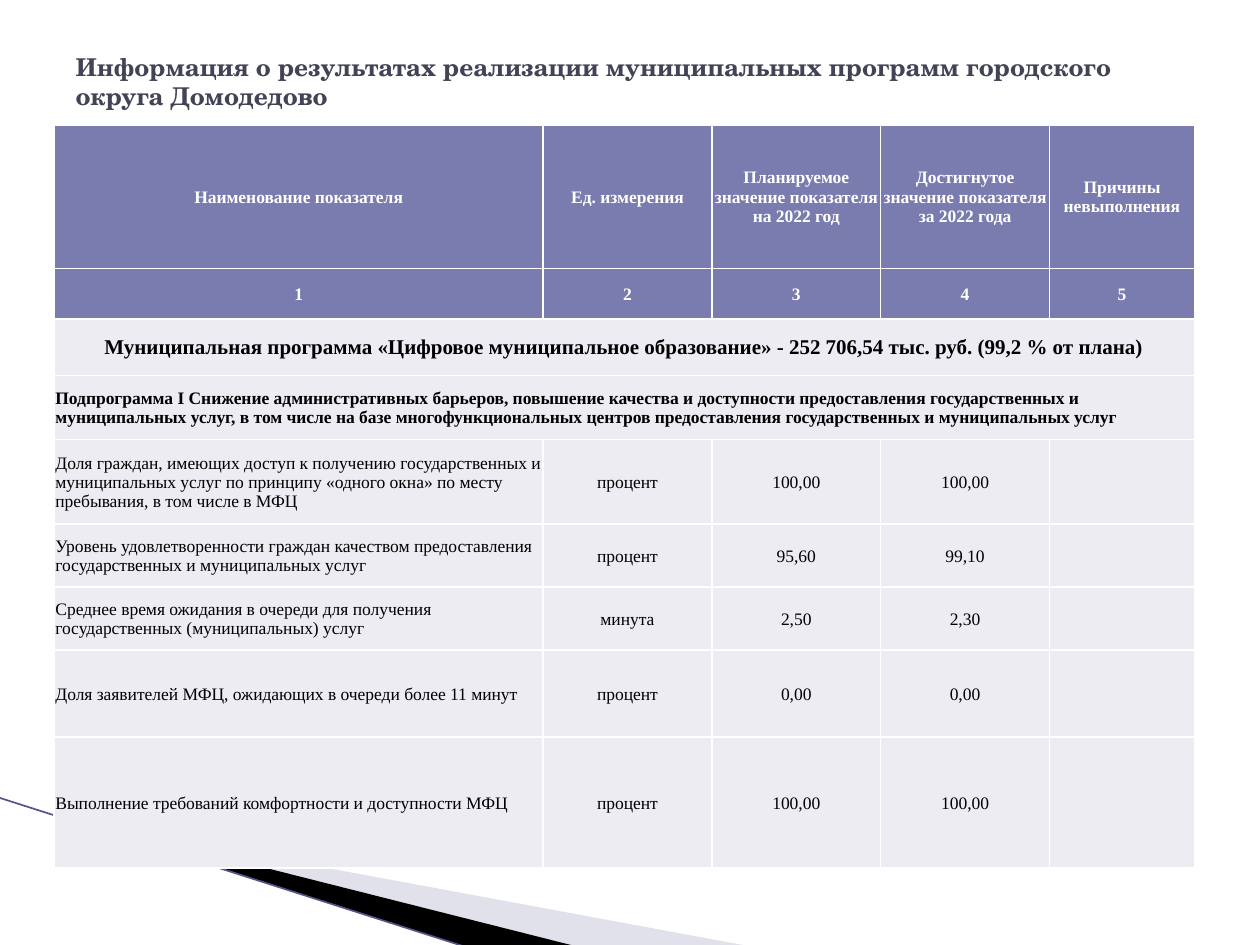
from dataclasses import dataclass

import pptx
import pptx.dml.color
import pptx.enum.shapes
import pptx.enum.text
import pptx.oxml
import pptx.oxml.ns
import pptx.util
from pptx.util import Inches

ALIGN = pptx.enum.text.PP_ALIGN
MIDDLE = pptx.enum.text.MSO_ANCHOR.MIDDLE


@dataclass(frozen=True)
class Theme:
    title_font: str = "TeX Gyre Schola"
    table_font: str = "Times New Roman"
    title_size: int = 14
    program_size: int = 12
    table_size: int = 10
    title: str = "424456"
    header: str = "7A7BAE"
    body: str = "ECECF2"
    white: str = "FFFFFF"
    black: str = "000000"
    pale_ray: str = "B6B6D1"
    ray_edge: str = "53548A"


THEME = Theme()

COLUMN_WIDTHS = [3.88, 1.34, 1.34, 1.34, 1.15]
ROW_HEIGHTS = [1.14, 0.4, 0.45, 0.51, 0.67, 0.5, 0.5, 0.69, 1.04]
HEADERS = [
    ["Наименование показателя", "Ед. измерения",
     "Планируемое значение показателя на 2022 год",
     "Достигнутое значение показателя за 2022 года",
     "Причины невыполнения"],
    ["1", "2", "3", "4", "5"],
]
PROGRAM = ("Муниципальная программа «Цифровое муниципальное образование» - "
           "252 706,54 тыс. руб. (99,2 % от плана)")
SUBPROGRAM = ("Подпрограмма I Снижение административных барьеров, повышение качества "
              "и доступности предоставления государственных и муниципальных услуг, "
              "в том числе на базе многофункциональных центров предоставления "
              "государственных и муниципальных услуг")
INDICATORS = [
    ["Доля граждан, имеющих доступ к получению государственных и муниципальных услуг "
     "по принципу «одного окна» по месту пребывания, в том числе в МФЦ",
     "процент", "100,00", "100,00", ""],
    ["Уровень удовлетворенности граждан качеством предоставления государственных "
     "и муниципальных услуг", "процент", "95,60", "99,10", ""],
    ["Среднее время ожидания в очереди для получения государственных "
     "(муниципальных) услуг", "минута", "2,50", "2,30", ""],
    ["Доля заявителей МФЦ, ожидающих в очереди более 11 минут",
     "процент", "0,00", "0,00", ""],
    ["Выполнение требований комфортности и доступности МФЦ",
     "процент", "100,00", "100,00", ""],
]


def rgb(color):
    return pptx.dml.color.RGBColor.from_string(color)


def set_font(paragraph, name, size, color, bold):
    font = paragraph.font
    font.name, font.size, font.bold = name, pptx.util.Pt(size), bold
    font.color.rgb = rgb(color)


def add_ray(slide, left, top, points, color, opacity=100):
    corners = [(left + Inches(x), top + Inches(y)) for x, y in points]
    builder = slide.shapes.build_freeform(*corners[0], scale=1.0)
    builder.add_line_segments(corners[1:], close=True)
    ray = builder.convert_to_shape()
    ray.shadow.inherit = False
    ray.line.fill.background()
    ray.fill.solid()
    ray.fill.fore_color.rgb = rgb(color)
    if opacity < 100:
        srgb = ray.fill._xPr.find(".//" + pptx.oxml.ns.qn("a:srgbClr"))
        alpha = pptx.oxml.parse_xml(
            f'<a:alpha {pptx.oxml.ns.nsdecls("a")} val="{opacity * 1000}"/>')
        srgb.append(alpha)


def add_corner_rays(slide, left, top, width, height):
    add_ray(slide, left, top,
            [(0.56, 0.18), (5.96, 1.18), (4.57, 1.18), (0.56, 0.17)],
            THEME.pale_ray, opacity=40)
    add_ray(slide, left, top,
            [(0.54, 0.16), (4.58, 1.18), (3.73, 1.19), (0.55, 0.17)], THEME.black)
    edge = slide.shapes.add_connector(
        pptx.enum.shapes.MSO_CONNECTOR.STRAIGHT, left, top, left + width, top + height)
    edge.line.color.rgb = rgb(THEME.ray_edge)
    edge.line.width = pptx.util.Pt(0.95)
    edge._element.spPr.append(
        pptx.oxml.parse_xml(f'<a:effectLst {pptx.oxml.ns.nsdecls("a")}/>'))


def place_title(slide, left, top, width, height):
    title = slide.shapes.title
    title.left, title.top, title.width, title.height = left, top, width, height
    frame = title.text_frame
    frame.text = ("Информация о результатах реализации муниципальных программ "
                  "городского округа Домодедово")
    frame.word_wrap = True
    frame.vertical_anchor = MIDDLE
    heading = frame.paragraphs[0]
    heading.alignment = ALIGN.LEFT
    set_font(heading, THEME.title_font, THEME.title_size, THEME.title, True)


def format_cell(cell, text, fill, color, size=THEME.table_size, bold=False,
                align=ALIGN.CENTER):
    properties = cell._tc.get_or_add_tcPr()
    for side in ("lnL", "lnR", "lnT", "lnB"):
        properties.append(pptx.oxml.parse_xml(
            f'<a:{side} {pptx.oxml.ns.nsdecls("a")} w="12700"><a:solidFill>'
            f'<a:srgbClr val="{THEME.white}"/></a:solidFill></a:{side}>'))
    cell.fill.solid()
    cell.fill.fore_color.rgb = rgb(fill)
    cell.vertical_anchor = MIDDLE
    cell.margin_left = cell.margin_right = cell.margin_top = Inches(0.01)
    cell.margin_bottom = 0
    cell.text = text
    paragraph = cell.text_frame.paragraphs[0]
    paragraph.alignment = align
    set_font(paragraph, THEME.table_font, size, color, bold)


def add_indicator_table(slide, left, top, width, height):
    table = slide.shapes.add_table(
        len(ROW_HEIGHTS), len(COLUMN_WIDTHS), left, top, width, height).table
    table.first_row = table.horz_banding = False
    for column, column_width in zip(table.columns, COLUMN_WIDTHS):
        column.width = Inches(column_width)
    for row, row_height in zip(table.rows, ROW_HEIGHTS):
        row.height = Inches(row_height)

    for row, labels in enumerate(HEADERS):
        for column, label in enumerate(labels):
            format_cell(table.cell(row, column), label, THEME.header, THEME.white,
                        bold=True)

    sections = [(PROGRAM, THEME.program_size, ALIGN.CENTER),
                (SUBPROGRAM, THEME.table_size, ALIGN.LEFT)]
    for row, (heading, size, align) in enumerate(sections, len(HEADERS)):
        table.cell(row, 0).merge(table.cell(row, len(COLUMN_WIDTHS) - 1))
        format_cell(table.cell(row, 0), heading, THEME.body, THEME.black, size, True, align)

    for row, values in enumerate(INDICATORS, len(HEADERS) + len(sections)):
        for column, value in enumerate(values):
            format_cell(table.cell(row, column), value, THEME.body, THEME.black,
                        align=ALIGN.CENTER if column else ALIGN.LEFT)


def main():
    presentation = pptx.Presentation()
    presentation.slide_width, presentation.slide_height = Inches(10), Inches(7.5)
    slide = presentation.slides.add_slide(presentation.slide_layouts[5])
    add_corner_rays(slide, Inches(-0.01), Inches(6.33), Inches(3.72), Inches(1.19))
    place_title(slide, Inches(0.5), Inches(0.3), Inches(9), Inches(0.69))
    add_indicator_table(slide, Inches(0.43), Inches(0.99),
                        Inches(sum(COLUMN_WIDTHS)), Inches(sum(ROW_HEIGHTS)))
    presentation.save("out.pptx")


if __name__ == "__main__":
    main()
